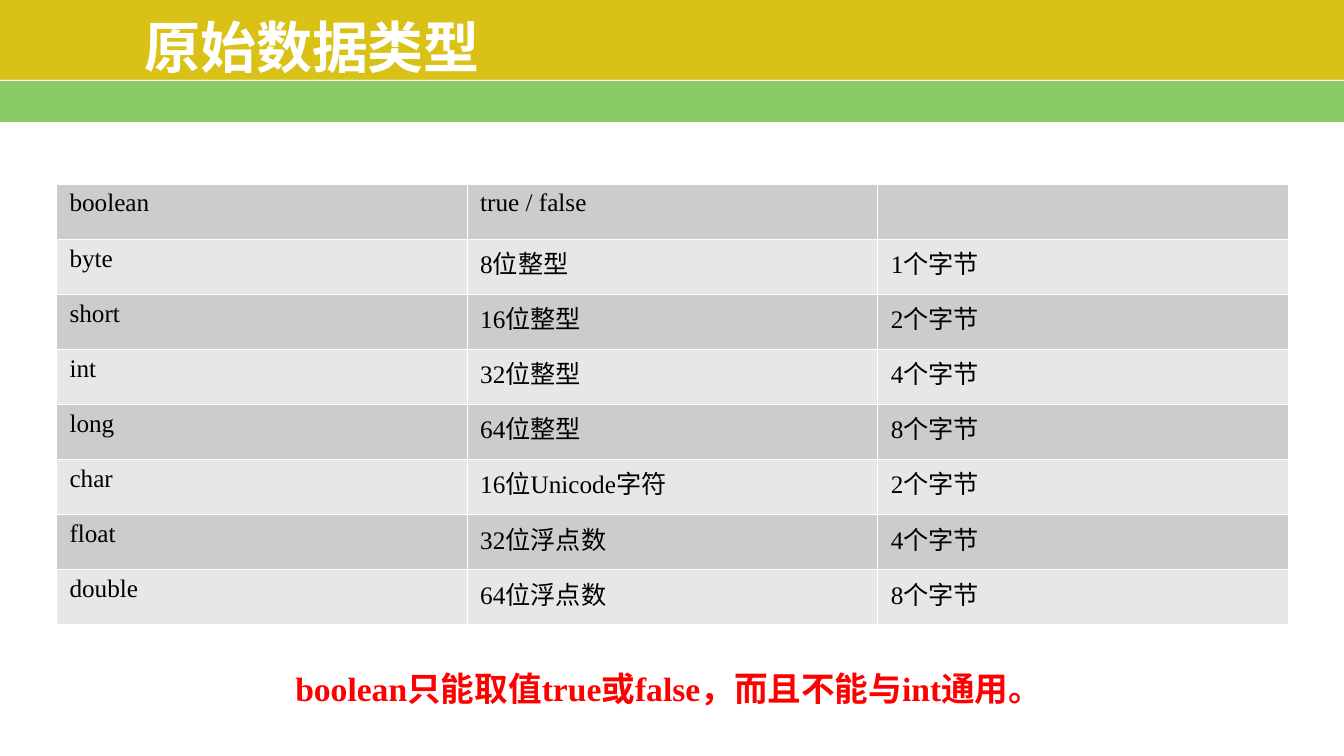
from lxml import etree
from pptx import Presentation
from pptx import oxml
from pptx.dml import color
from pptx.enum import shapes, text
from pptx.oxml import ns
from pptx.util import Inches, Pt

HAN = "Noto Sans CJK SC"
LATIN = "Times New Roman"
TYPES = [
    ("boolean", "true / false", ""),
    ("byte", "8位整型", "1个字节"),
    ("short", "16位整型", "2个字节"),
    ("int", "32位整型", "4个字节"),
    ("long", "64位整型", "8个字节"),
    ("char", "16位Unicode字符", "2个字节"),
    ("float", "32位浮点数", "4个字节"),
    ("double", "64位浮点数", "8个字节"),
]
NOTE = [
    ("boolean", LATIN), ("只能取值", HAN), ("true", LATIN), ("或", HAN),
    ("false", LATIN), ("，而且不能与", HAN), ("int", LATIN), ("通用。", HAN),
]


def rgb(code):
    return color.RGBColor.from_string(code)


def edge(cell, hue):
    """Draw a 1 pt line on all four sides of a table cell."""
    props = cell._tc.get_or_add_tcPr()
    for side in "LRTB":
        props.append(oxml.parse_xml(
            f'<a:ln{side} {ns.nsdecls("a")} w="12700"><a:solidFill>'
            f'<a:srgbClr val="{hue}"/></a:solidFill></a:ln{side}>'))


class Page:
    """Holds the style and the current slide."""
    gold, green, white, red = "D9C215", "89CA64", "FFFFFF", "FF0000"
    bands = ("CCCCCC", "E7E7E7")

    def __init__(self, deck):
        self.slide = deck.slides.add_slide(deck.slide_layouts[5])
        self.items = self.slide.shapes

    def run(self, para, words, face, size, hue, bold=False):
        run = para.add_run()
        run.text = words
        font = run.font
        font.name, font.size, font.bold = face, Pt(size), bold
        font.color.rgb = rgb(hue)
        east = etree.SubElement(run._r.get_or_add_rPr(), ns.qn("a:ea"))
        east.set("typeface", HAN)

    def band(self, top, high, hue):
        box = self.items.add_shape(
            shapes.MSO_SHAPE.RECTANGLE, 0, Inches(top), Inches(13.33), Inches(high))
        box.shadow.inherit = False
        box.fill.solid()
        box.fill.fore_color.rgb = rgb(hue)
        box.line.fill.background()

    def rule(self, top):
        line = self.items.add_connector(
            shapes.MSO_CONNECTOR.STRAIGHT, 0, Inches(top), Inches(13.33), Inches(top))
        line.line.color.rgb = rgb(self.white)
        line.line.width = Pt(1)
        etree.SubElement(line._element.spPr, ns.qn("a:effectLst"))

    def title(self, words):
        """Fill the title and lift it above the bands."""
        box = self.items.title
        box.left, box.top = Inches(1.33), Inches(0.19)
        box.width, box.height = Inches(10.33), Inches(0.53)
        frame = box.text_frame
        frame.auto_size = text.MSO_AUTO_SIZE.NONE
        frame.vertical_anchor = text.MSO_ANCHOR.MIDDLE
        para = frame.paragraphs[0]
        para.alignment = text.PP_ALIGN.LEFT
        self.run(para, words, HAN, 40, self.white, True)
        box._element.getparent().append(box._element)

    def table(self, rows):
        grid = self.items.add_table(
            len(rows), len(rows[0]), Inches(0.56), Inches(1.83),
            Inches(12.22), Inches(4.37)).table
        grid.first_row = grid.horz_banding = False
        for i, row in enumerate(rows):
            for j, words in enumerate(row):
                cell = grid.cell(i, j)
                cell.margin_left = cell.margin_right = Inches(0.13)
                cell.margin_top = cell.margin_bottom = Inches(0.05)
                edge(cell, self.white)
                cell.fill.solid()
                cell.fill.fore_color.rgb = rgb(self.bands[i % 2])
                if words:
                    self.run(cell.text_frame.paragraphs[0], words, LATIN, 18, "000000")

    def note(self, parts):
        box = self.items.add_textbox(
            Inches(2.83), Inches(6.58), Inches(7.68), Inches(0.5))
        frame = box.text_frame
        frame.word_wrap = True
        for words, face in parts:
            self.run(frame.paragraphs[0], words, face, 24, self.red, True)


def main():
    deck = Presentation()
    deck.slide_width, deck.slide_height = Inches(13.33), Inches(7.5)
    page = Page(deck)
    page.band(0.79, 0.42, page.green)
    page.band(0, 0.79, page.gold)
    page.rule(0.8)
    page.title("原始数据类型")
    page.table(TYPES)
    page.note(NOTE)
    deck.save("out.pptx")


if __name__ == "__main__":
    main()
